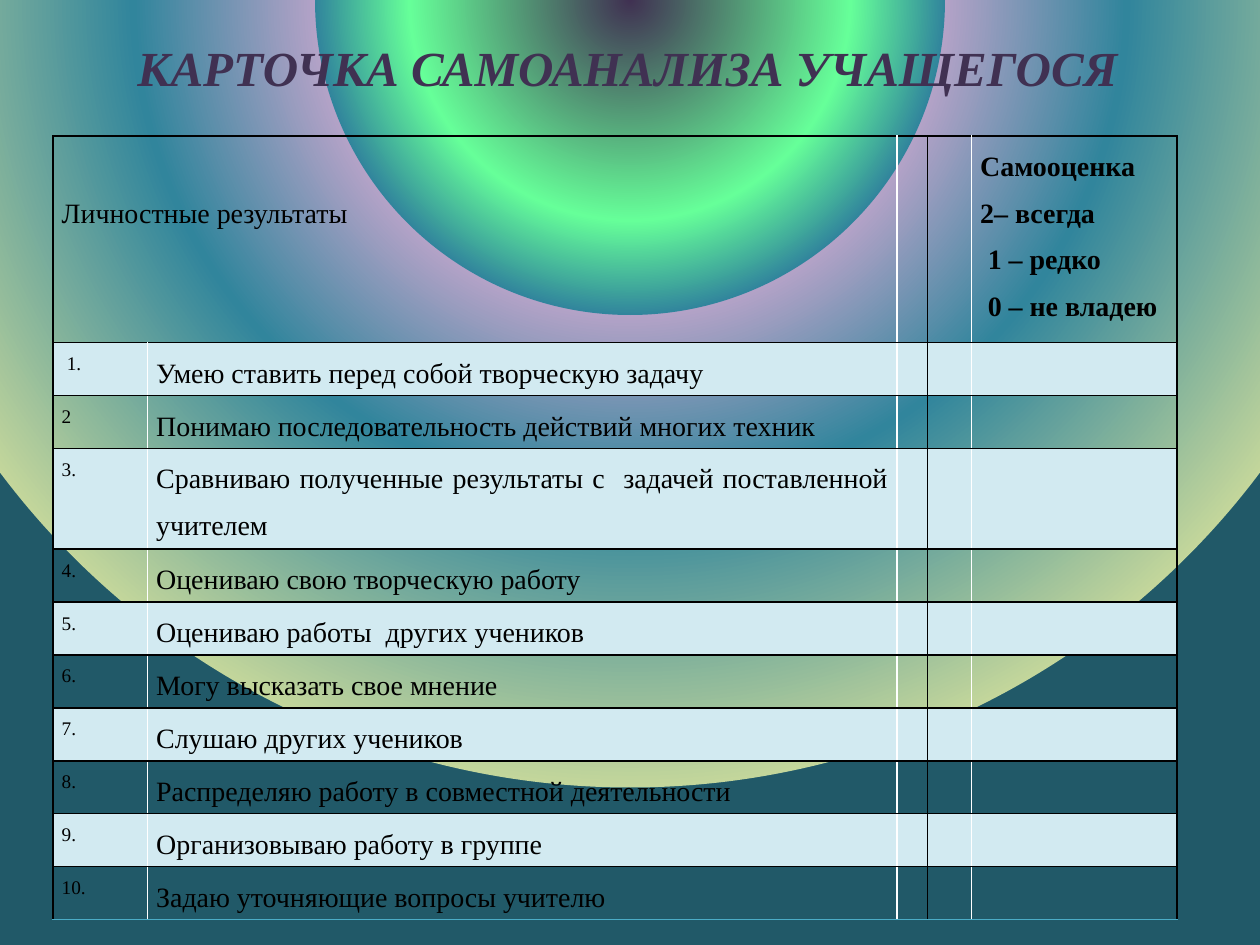
import pptx
import pptx.util
import pptx.oxml
import pptx.oxml.ns
import pptx.dml.color
import pptx.enum.text

Pt, Inches = pptx.util.Pt, pptx.util.Inches
RGB = pptx.dml.color.RGBColor
Align = pptx.enum.text.PP_ALIGN
NS = pptx.oxml.ns.nsdecls("a", "p")

BLACK = RGB(0x00, 0x00, 0x00)
PLUM = RGB(0x40, 0x31, 0x52)
PALE = RGB(0xD2, 0xEA, 0xF1)
AQUA = RGB(0x4B, 0xAC, 0xC6)
TEAL = RGB(0x31, 0x85, 0x9C)
GREEN = RGB(0x66, 0xFF, 0x99)
LILAC = RGB(0xB3, 0xA2, 0xC7)
LIME = RGB(0xC3, 0xD6, 0x9B)
DEEP = RGB(0x21, 0x59, 0x68)
FONT = "Times New Roman"

STOPS = [(0, TEAL), (0, TEAL), (0, TEAL), (0, PLUM), (28, GREEN),
         (40, TEAL), (40, LILAC), (63, TEAL), (100, LIME), (100, DEEP)]
COLS = [0.75, 5.95, 0.24, 0.35, 1.63]
HEAD, ROW, TALL = 1.64, 0.42, 0.8
SCALE = ["Самооценка", "2– всегда", "1 – редко", "0 – не владею"]
SKILLS = [
    ("1.", "Умею ставить перед собой творческую задачу"),
    ("2", "Понимаю последовательность действий многих техник"),
    ("3.", "Сравниваю полученные результаты с  задачей поставленной учителем"),
    ("4.", "Оцениваю свою творческую работу"),
    ("5.", "Оцениваю работы  других учеников"),
    ("6.", "Могу высказать свое мнение"),
    ("7.", "Слушаю других учеников"),
    ("8.", "Распределяю работу в совместной деятельности"),
    ("9.", "Организовываю работу в группе"),
    ("10.", "Задаю уточняющие вопросы учителю"),
]


def write(para, text, size, bold=False, align=Align.LEFT, left=0):
    para.text = text
    para.alignment = align
    para.line_spacing = 1.5
    if left:
        props = para._p.get_or_add_pPr()
        props.set("marL", str(Inches(left)))
        props.set("indent", "0")
    para.font.name, para.font.size = FONT, Pt(size)
    para.font.bold, para.font.color.rgb = bold, BLACK


def edge(cell, sides, low):
    props = cell._tc.get_or_add_tcPr()
    for spot, side in enumerate(sides):
        color = low if side == "B" else BLACK
        props.insert(spot, pptx.oxml.parse_xml(
            f'<a:ln{side} {NS} w="{Pt(1)}"><a:solidFill>'
            f'<a:srgbClr val="{color}"/></a:solidFill></a:ln{side}>'))


# Slide and radial background
deck = pptx.Presentation()
deck.slide_width, deck.slide_height = Inches(10), Inches(7.5)
W, H = deck.slide_width, deck.slide_height
slide = deck.slides.add_slide(deck.slide_layouts[5])
stops = "".join(f'<a:gs pos="{pos * 1000}"><a:srgbClr val="{color}"/></a:gs>'
                for pos, color in STOPS)
slide.element.find(pptx.oxml.ns.qn("p:cSld")).insert(0, pptx.oxml.parse_xml(
    f'<p:bg {NS}><p:bgPr><a:gradFill><a:gsLst>{stops}</a:gsLst>'
    '<a:path path="circle"><a:fillToRect l="100000" t="-60000" r="100000" '
    'b="200000"/></a:path></a:gradFill><a:effectLst/></p:bgPr></p:bg>'))

# Title
title = slide.shapes.title
title.left, title.top = int(W * 0.095), int(H * 0.033)
title.width, title.height = int(W * 0.806), int(H * 0.076)
frame = title.text_frame
frame.word_wrap = False
frame.auto_size = pptx.enum.text.MSO_AUTO_SIZE.SHAPE_TO_FIT_TEXT
frame.vertical_anchor = pptx.enum.text.MSO_ANCHOR.MIDDLE
para = frame.paragraphs[0]
para.text = "КАРТОЧКА САМОАНАЛИЗА УЧАЩЕГОСЯ"
para.alignment = Align.CENTER
para.font.name, para.font.size = FONT, Pt(28)
para.font.bold = para.font.italic = True
para.font.color.rgb = PLUM

# Table grid
rows = [HEAD] + [TALL if num == "3." else ROW for num, _ in SKILLS]
table = slide.shapes.add_table(
    len(rows), len(COLS), int(W * 0.042), int(H * 0.144),
    Inches(sum(COLS)), Inches(sum(rows))).table
table.first_row = table.horz_banding = False
for col, width in zip(table.columns, COLS):
    col.width = Inches(width)
for row, height in zip(table.rows, rows):
    row.height = Inches(height)

# Fills, margins and borders
for r in range(len(rows)):
    low = AQUA if r == len(rows) - 1 else BLACK
    for c, sides in enumerate(["LTB", "TB", "RTB", "LTB", "RTB"]):
        cell = table.cell(r, c)
        cell.margin_left = cell.margin_right = Inches(0.07)
        cell.margin_top = cell.margin_bottom = 0
        if r % 2:
            cell.fill.solid()
            cell.fill.fore_color.rgb = PALE
        else:
            cell.fill.background()
        edge(cell, sides, low)

# Header row
head = table.cell(0, 0)
head.merge(table.cell(0, 1))
head.margin_top = Inches(0.37)
write(head.text_frame.paragraphs[0], "Личностные результаты", 16)
frame = table.cell(0, 4).text_frame
for i, text in enumerate(SCALE):
    para = frame.add_paragraph() if i else frame.paragraphs[0]
    write(para, text, 16, bold=True, left=0.06 if i > 1 else 0)

# Skill rows
for r, (num, text) in enumerate(SKILLS, 1):
    write(table.cell(r, 0).text_frame.paragraphs[0], num, 11,
          align=Align.JUSTIFY, left=0.04 if r == 1 else 0)
    write(table.cell(r, 1).text_frame.paragraphs[0], text, 16,
          align=Align.JUSTIFY)

deck.save("out.pptx")
